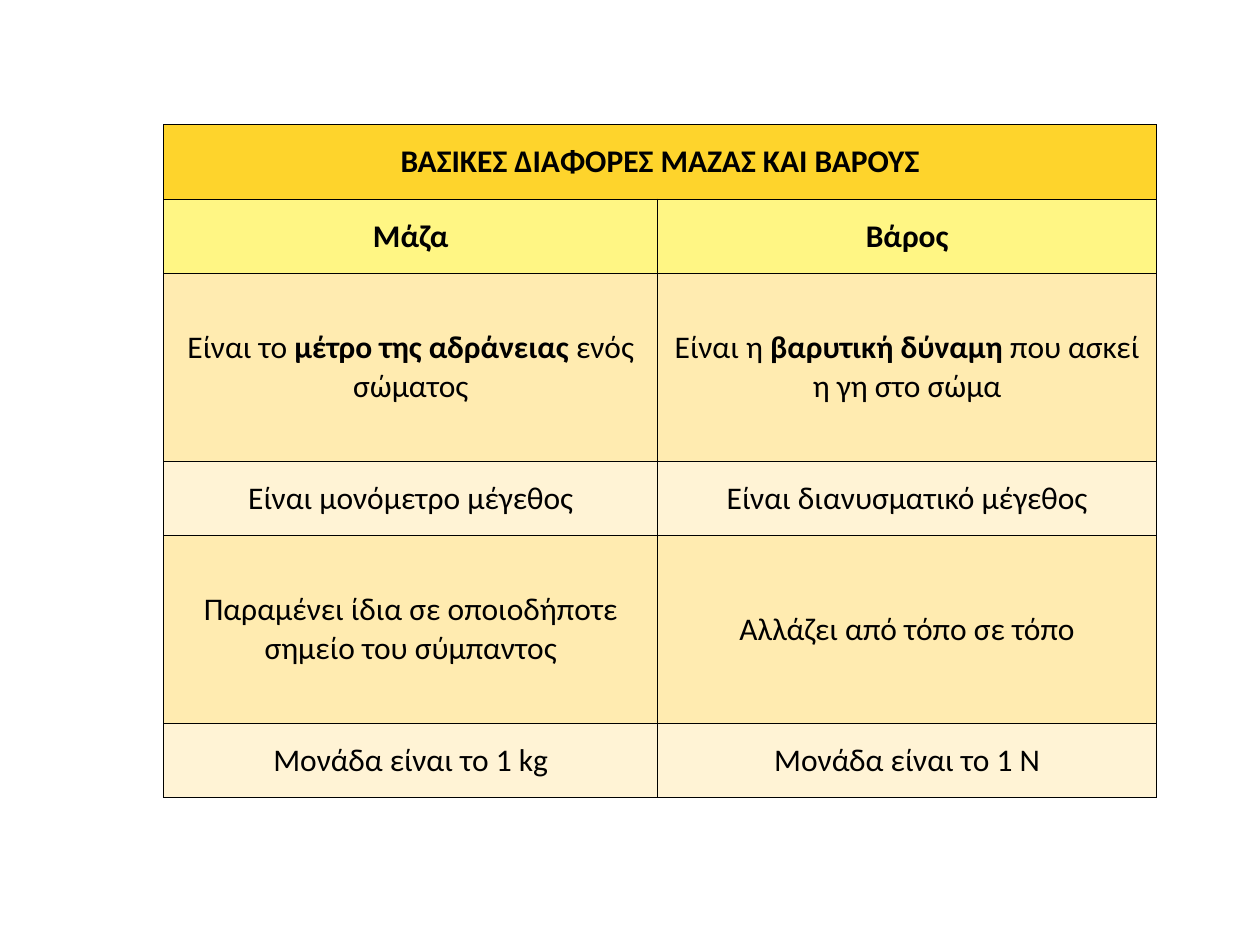
"""Build a slide with a table comparing mass and weight."""
from dataclasses import dataclass

from lxml.etree import SubElement
from pptx import Presentation
from pptx.dml.color import RGBColor
from pptx.enum.text import MSO_ANCHOR, PP_ALIGN
from pptx.oxml.ns import qn
from pptx.table import Table, _Cell
from pptx.util import Inches, Pt

BLACK = "000000"
GOLD, YELLOW, SAND, CREAM = "FED42C", "FFF684", "FFEBB0", "FFF3D5"
SHORT, TALL = 0.59, 1.49
COLUMN_WIDTHS = (3.92, 3.96)


@dataclass(frozen=True)
class Row:
    """One table row, with bold phrases between asterisks."""

    mass: str
    weight: str
    fill: str
    height: float = SHORT
    bold: bool = False


ROWS = (
    Row("ΒΑΣΙΚΕΣ ΔΙΑΦΟΡΕΣ ΜΑΖΑΣ ΚΑΙ ΒΑΡΟΥΣ", "", GOLD, bold=True),
    Row("Μάζα", "Βάρος", YELLOW, bold=True),
    Row("Είναι το *μέτρο της αδράνειας* ενός σώματος",
        "Είναι η *βαρυτική δύναμη* που ασκεί η γη στο σώμα", SAND, TALL),
    Row("Είναι μονόμετρο μέγεθος", "Είναι διανυσματικό μέγεθος", CREAM),
    Row("Παραμένει ίδια σε οποιοδήποτε σημείο του σύμπαντος",
        "Αλλάζει από τόπο σε τόπο", SAND, TALL),
    Row("Μονάδα είναι το 1 kg", "Μονάδα είναι το 1 Ν", CREAM),
)


def color(value: str) -> RGBColor:
    """Turn a hex string into a colour."""
    return RGBColor.from_string(value)


def add_borders(cell: _Cell) -> None:
    """Draw a thin black line on each side of a cell."""
    properties = cell._tc.get_or_add_tcPr()
    for side in ("a:lnL", "a:lnR", "a:lnT", "a:lnB"):
        line = SubElement(properties, qn(side), w=str(Pt(0.75)))
        line_fill = SubElement(line, qn("a:solidFill"))
        SubElement(line_fill, qn("a:srgbClr"), val=BLACK)


def write_text(cell: _Cell, text: str, bold: bool) -> None:
    """Write centred text, switching to bold between asterisks."""
    cell.vertical_anchor = MSO_ANCHOR.MIDDLE
    paragraph = cell.text_frame.paragraphs[0]
    paragraph.alignment = PP_ALIGN.CENTER
    paragraph.font.name = "Calibri"
    paragraph.font.size = Pt(18)
    paragraph.font.color.rgb = color(BLACK)
    for index, phrase in enumerate(text.split("*")):
        if phrase:
            run = paragraph.add_run()
            run.text = phrase
            run.font.bold = bold or index % 2 == 1


def fill_row(table: Table, index: int, row: Row) -> None:
    """Set the height, look and wording of one row."""
    table.rows[index].height = Inches(row.height)
    for column, text in enumerate((row.mass, row.weight)):
        cell = table.cell(index, column)
        add_borders(cell)
        cell.fill.solid()
        cell.fill.fore_color.rgb = color(row.fill)
        write_text(cell, text, row.bold)


def main() -> None:
    """Build and save the presentation."""
    presentation = Presentation()
    presentation.slide_width = Inches(10)
    presentation.slide_height = Inches(7.5)
    slide = presentation.slides.add_slide(presentation.slide_layouts[6])
    table = slide.shapes.add_table(
        len(ROWS), len(COLUMN_WIDTHS), Inches(1.3), Inches(0.99),
        Inches(sum(COLUMN_WIDTHS)), Inches(sum(row.height for row in ROWS)),
    ).table
    table.first_row = False
    table.horz_banding = False
    for column, width in zip(table.columns, COLUMN_WIDTHS):
        column.width = Inches(width)
    for index, row in enumerate(ROWS):
        fill_row(table, index, row)
    table.cell(0, 0).merge(table.cell(0, 1))
    presentation.save("out.pptx")


if __name__ == "__main__":
    main()
